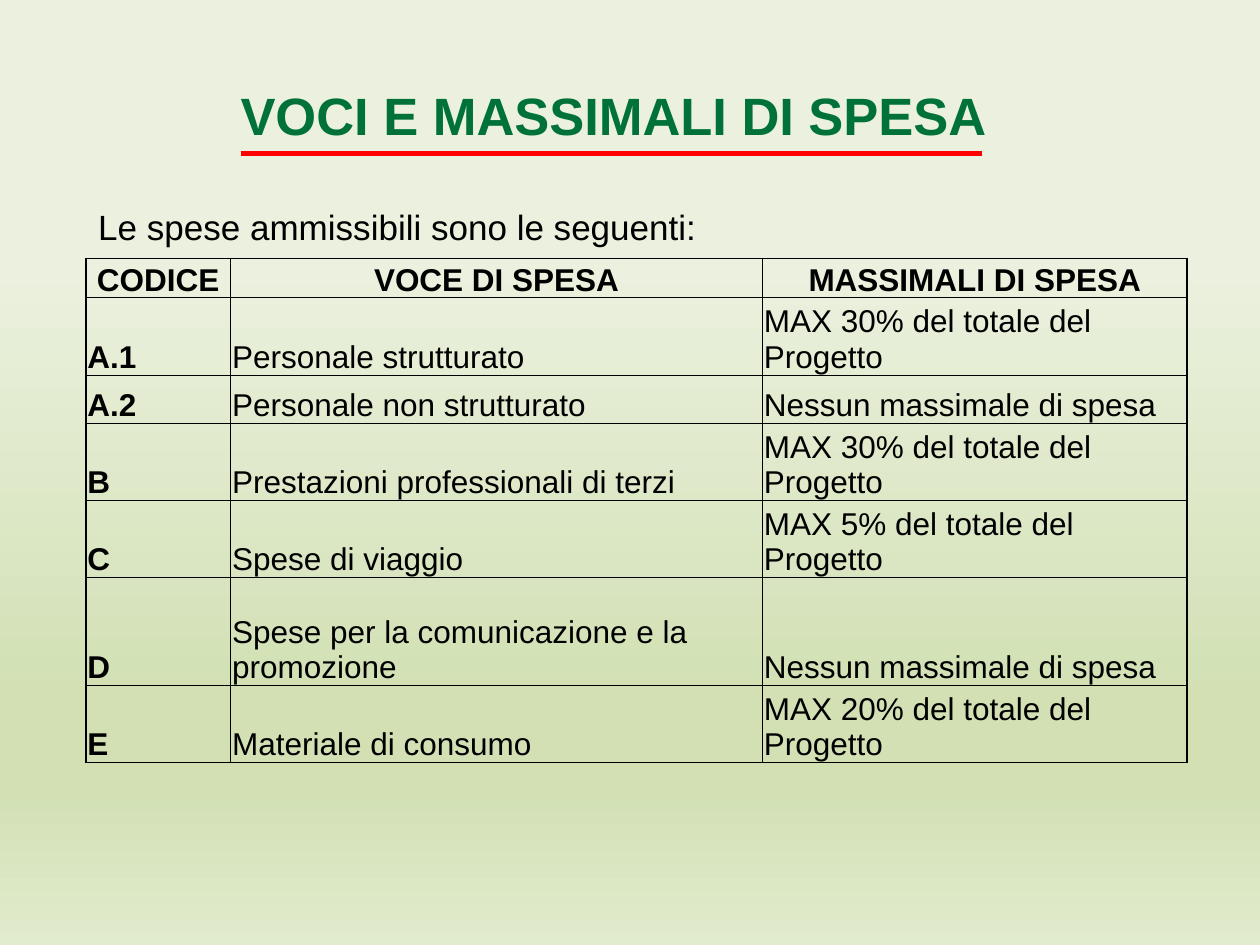
from lxml import etree
from pptx import Presentation
from pptx import util as u
from pptx.dml.color import RGBColor
from pptx.enum import shapes, text
from pptx.oxml.ns import qn

COLORS = {"title": "007239", "ink": "000000", "rule": "FF0000",
          "pale": "EBF1DE", "green": "D2E0B4", "light": "E1EBCD"}
BACKGROUND_STOPS = [(28, "pale"), (74, "green"), (83, "green"), (100, "light")]

HEADINGS = ("CODICE", "VOCE DI SPESA", "MASSIMALI DI SPESA")
NO_LIMIT = "Nessun massimale di spesa"
LIMIT = "MAX {}% del totale del Progetto"
EXPENSES = [
    ("A.1", "Personale strutturato", LIMIT.format(30)),
    ("A.2", "Personale non strutturato", NO_LIMIT),
    ("B", "Prestazioni professionali di terzi", LIMIT.format(30)),
    ("C", "Spese di viaggio", LIMIT.format(5)),
    ("D", "Spese per la comunicazione e la promozione", NO_LIMIT),
    ("E", "Materiale di consumo", LIMIT.format(20)),
]
COLUMN_WIDTHS = (2.92, 10.72, 8.56)
ROW_HEIGHTS = (0.79, 1.45, 0.97, 1.45, 1.45, 2.18, 1.45)


def set_all(target, values):
    for name, value in values.items():
        setattr(target, name, value)


def write(paragraph, words, size, color="ink", bold=False, align=text.PP_ALIGN.LEFT):
    paragraph.alignment = align
    run = paragraph.add_run()
    run.text = words
    set_all(run.font, {"name": "Arial", "size": u.Pt(size), "bold": bold})
    run.font.color.rgb = RGBColor.from_string(COLORS[color])


def paint_background(slide):
    fill = slide.background.fill
    fill.gradient()
    gradient = slide.background._cSld.find(".//" + qn("a:gradFill"))
    stops = gradient.find(qn("a:gsLst"))
    for stop in list(stops):
        stops.remove(stop)
    for position, color in BACKGROUND_STOPS:
        stop = etree.SubElement(stops, qn("a:gs"), pos=str(position * 1000))
        etree.SubElement(stop, qn("a:srgbClr"), val=COLORS[color])
    gradient.find(qn("a:lin")).set("ang", "5400000")


def add_words(slide, box, words, anchor, **style):
    frame = slide.shapes.add_textbox(*map(u.Cm, box)).text_frame
    set_all(frame, {"word_wrap": True, "vertical_anchor": anchor})
    write(frame.paragraphs[0], words, **style)


def add_title(slide, box):
    left, top, width, height = box
    add_words(slide, box, "VOCI E MASSIMALI DI SPESA", text.MSO_ANCHOR.MIDDLE,
              size=30, color="title", bold=True)
    rule_y = u.Cm(top + 1.83)
    rule = slide.shapes.add_connector(shapes.MSO_CONNECTOR.STRAIGHT,
                                      u.Cm(left + 0.25), rule_y,
                                      u.Cm(left + 15.19), rule_y)
    rule.line.width = u.Pt(3)
    rule.line.color.rgb = RGBColor.from_string(COLORS["rule"])
    etree.SubElement(rule._element.spPr, qn("a:effectLst"))


def add_borders(cell, widths):
    """Draw the left, right, top and bottom borders, in that order."""
    properties = cell._tc.get_or_add_tcPr()
    for index, (side, width) in enumerate(zip("LRTB", widths)):
        line = etree.Element(qn("a:ln" + side), w=str(u.Pt(width)))
        fill = etree.SubElement(line, qn("a:solidFill"))
        etree.SubElement(fill, qn("a:srgbClr"), val=COLORS["ink"])
        properties.insert(index, line)


def add_expense_table(slide, left, top):
    rows = [HEADINGS, *EXPENSES]
    table = slide.shapes.add_table(
        len(rows), len(HEADINGS), u.Cm(left), u.Cm(top),
        u.Cm(sum(COLUMN_WIDTHS)), u.Cm(sum(ROW_HEIGHTS))).table
    set_all(table, {"first_row": False, "horz_banding": False})
    for column, width in zip(table.columns, COLUMN_WIDTHS):
        column.width = u.Cm(width)
    for row, height in zip(table.rows, ROW_HEIGHTS):
        row.height = u.Cm(height)

    last_row, last_column = len(rows) - 1, len(HEADINGS) - 1
    inset = u.Cm(0.03)
    for r, row in enumerate(rows):
        for c, words in enumerate(row):
            cell = table.cell(r, c)
            set_all(cell, {"margin_left": inset, "margin_right": inset,
                           "margin_top": inset, "margin_bottom": 0,
                           "vertical_anchor": text.MSO_ANCHOR.BOTTOM})
            cell.fill.background()
            outer = (c == 0, c == last_column, r == 0, r == last_row)
            add_borders(cell, [1 if edge else 0.5 for edge in outer])
            align = text.PP_ALIGN.CENTER if r == 0 else text.PP_ALIGN.LEFT
            write(cell.text_frame.paragraphs[0], words, size=18,
                  bold=r == 0 or c == 0, align=align)


def main():
    deck = Presentation()
    set_all(deck, {"slide_width": u.Cm(25.4), "slide_height": u.Cm(19.05)})
    slide = deck.slides.add_slide(deck.slide_layouts[6])
    paint_background(slide)
    add_title(slide, (4.6, 1.27, 21.59, 2.08))
    add_words(slide, (1.73, 4.01, 21.59, 10.46), "Le spese ammissibili sono le seguenti:",
              text.MSO_ANCHOR.TOP, size=20, align=text.PP_ALIGN.JUSTIFY)
    add_expense_table(slide, 1.73, 5.21)
    deck.save("out.pptx")


if __name__ == "__main__":
    main()
